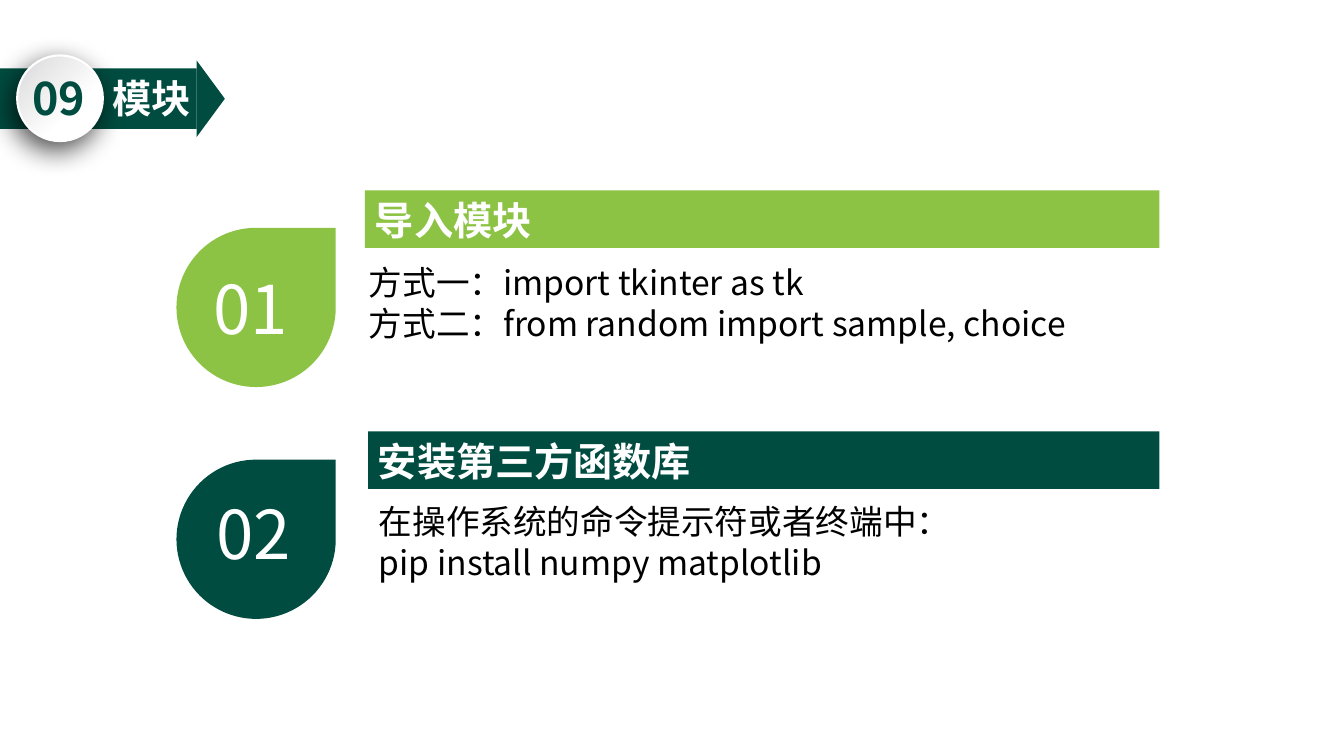
from lxml import etree
from pptx import Presentation
from pptx.dml.color import RGBColor
from pptx.enum import shapes, text
from pptx.oxml import parse_xml
from pptx.util import Inches, Pt

FONT = "Noto Sans CJK SC"
DARK, LIME, WHITE, BLACK = "004C40", "8CC344", "FFFFFF", "000000"
KIND = shapes.MSO_SHAPE
NS = 'xmlns:a="http://schemas.openxmlformats.org/drawingml/2006/main"'

GRAD = f"""<a:gradFill {NS} rotWithShape="1"><a:gsLst>
<a:gs pos="34000"><a:srgbClr val="FFFFFF"/></a:gs>
<a:gs pos="96000"><a:srgbClr val="DBDBDD"/></a:gs></a:gsLst>
<a:path path="circle"><a:fillToRect l="100000" t="100000"/></a:path></a:gradFill>"""
SHADE = f"""<a:effectLst {NS}>
<a:outerShdw blurRad="254000" dist="88900" dir="7200000" algn="tr" rotWithShape="0">
<a:srgbClr val="000000"><a:alpha val="70000"/></a:srgbClr></a:outerShdw></a:effectLst>"""


def color(code):
    return RGBColor.from_string(code)


def write(shape, words, size, tint, bold=False, align=text.PP_ALIGN.LEFT):
    frame = shape.text_frame
    frame.word_wrap = True
    frame.vertical_anchor = text.MSO_ANCHOR.TOP
    frame.text = words
    for para in frame.paragraphs:
        para.alignment = align
        para.line_spacing = Pt(round(size * 1.22, 1))
        for run in para.runs:
            font = run.font
            font.name, font.size, font.bold = FONT, Pt(size), bold
            font.color.rgb = color(tint)
            # East Asian glyphs use the same typeface
            east = etree.SubElement(run._r.get_or_add_rPr(), "{%s}ea" % run._r.nsmap["a"])
            east.set("typeface", FONT)


def block(slide, kind, box, fill):
    shape = slide.shapes.add_shape(kind, *map(Inches, box))
    shape.shadow.inherit = False
    shape.fill.solid()
    shape.fill.fore_color.rgb = color(fill)
    shape.line.fill.background()
    return shape


def label(slide, box, *style, **more):
    write(slide.shapes.add_textbox(*map(Inches, box)), *style, **more)


def badge(slide, box):
    disc = block(slide, KIND.OVAL, box, WHITE)
    disc.line.color.rgb = color(WHITE)
    disc.line.width = Pt(1.5)
    props = disc._element.spPr
    props.replace(props.find("{*}solidFill"), parse_xml(GRAD))
    props.replace(props.find("{*}effectLst"), parse_xml(SHADE))


def header(slide):
    block(slide, KIND.RECTANGLE, (0, 0.68, 1.95, 0.6), DARK)
    tip = block(slide, KIND.ISOSCELES_TRIANGLE, (1.71, 0.84, 0.76, 0.28), DARK)
    tip.rotation = 90
    label(slide, (1.02, 0.68, 7.76, 0.87), "模块", 28, WHITE, bold=True)
    badge(slide, (0.17, 0.55, 0.85, 0.85))
    label(slide, (0.22, 0.64, 0.76, 0.64), "09", 32, DARK, bold=True)


def topic(slide, fill, drop, number, spot, title, bar, body, place):
    # Numbered drop
    block(slide, KIND.TEAR, (1.75, drop, 1.58, 1.58), fill)
    label(slide, (*spot, 0.99, 0.91), number, 48, WHITE)
    # Title bar, ending at the shared right edge
    left, top = bar
    strip = block(slide, KIND.RECTANGLE, (left, top, 11.5 - left, 0.57), fill)
    write(strip, title, 28, WHITE, bold=True)
    # Explanation
    label(slide, (*place, 7.93, 0.91), body, 24, BLACK, align=text.PP_ALIGN.JUSTIFY)


def main():
    deck = Presentation()
    deck.slide_width, deck.slide_height = Inches(13.33), Inches(7.5)
    slide = deck.slides.add_slide(deck.slide_layouts[6])
    slide.background.fill.solid()
    slide.background.fill.fore_color.rgb = color(WHITE)
    header(slide)
    topic(slide, LIME, 2.26, "01", (2.02, 2.59), "导入模块", (3.62, 1.89),
          "方式一：import tkinter as tk\n方式二：from random import sample, choice",
          (3.56, 2.54))
    topic(slide, DARK, 4.56, "02", (2.05, 4.82), "安装第三方函数库", (3.65, 4.28),
          "在操作系统的命令提示符或者终端中：\npip install numpy matplotlib",
          (3.66, 4.91))
    deck.save("out.pptx")


if __name__ == "__main__":
    main()
